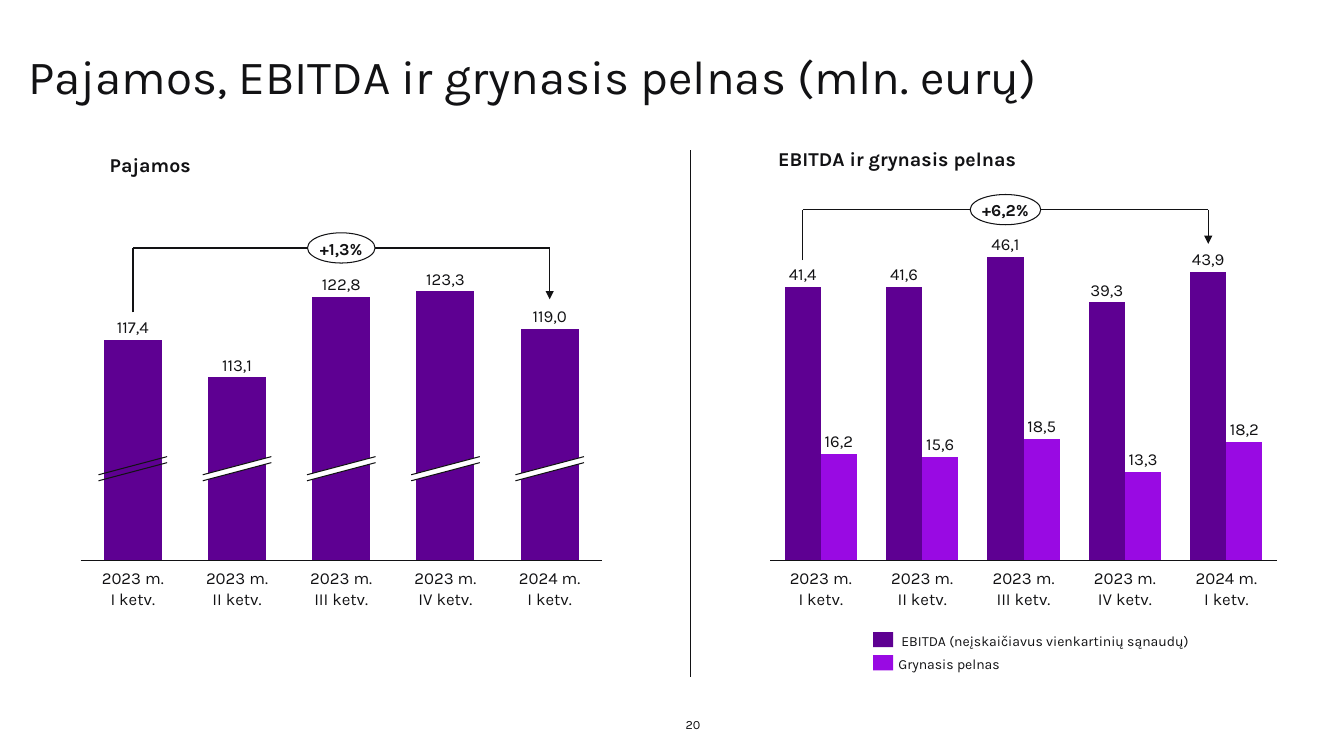
import pptx
import pptx.chart.data
import pptx.dml.color
import pptx.enum.chart
import pptx.enum.shapes
import pptx.enum.text
import pptx.oxml
import pptx.oxml.ns
import pptx.util

Inches = pptx.util.Inches
Pt = pptx.util.Pt
ALIGN = pptx.enum.text.PP_ALIGN
ANCHOR = pptx.enum.text.MSO_ANCHOR
SHAPE = pptx.enum.shapes.MSO_SHAPE
CHART = pptx.enum.chart.XL_CHART_TYPE

FONT = "Karla"
COLORS = {"ink": "121214", "white": "FFFFFF", "purple": "5E0092", "violet": "990AE3"}
QUARTERS = ["2023 m. I ketv.", "2023 m. II ketv.", "2023 m. III ketv.",
            "2023 m. IV ketv.", "2024 m. I ketv."]
GAP_WIDTH = 80
LABEL_GAP = 0.03
LABEL_HEIGHT = 0.21


def color(name):
    return pptx.dml.color.RGBColor.from_string(COLORS[name])


def set_text(shape, text, size=12, bold=False, align=ALIGN.LEFT, anchor=ANCHOR.TOP,
             spacing=1.06, wrap=True, margins=(0, 0)):
    frame = shape.text_frame
    frame.word_wrap = wrap
    frame.auto_size = pptx.enum.text.MSO_AUTO_SIZE.NONE
    frame.vertical_anchor = anchor
    frame.margin_left = frame.margin_right = Inches(margins[0])
    frame.margin_top = frame.margin_bottom = Inches(margins[1])
    paragraph = frame.paragraphs[0]
    paragraph.text = text
    paragraph.alignment = align
    paragraph.line_spacing = spacing
    paragraph.font.name = FONT
    paragraph.font.size = Pt(size)
    paragraph.font.bold = bold
    paragraph.font.color.rgb = color("ink")


def add_text(slide, text, left, top, width, height, **text_format):
    box = slide.shapes.add_textbox(Inches(left), Inches(top), Inches(width), Inches(height))
    set_text(box, text, **text_format)


def add_filled_shape(slide, kind, left, top, width, height, fill, outlined=False):
    shape = slide.shapes.add_shape(kind, Inches(left), Inches(top), Inches(width), Inches(height))
    shape.shadow.inherit = False
    shape.fill.solid()
    shape.fill.fore_color.rgb = color(fill)
    if outlined:
        shape.line.color.rgb = color("ink")
        shape.line.width = Pt(0.75)
    else:
        shape.line.fill.background()
    return shape


def add_line(slide, start, end, width=1, arrow=False):
    connector = slide.shapes.add_connector(
        pptx.enum.shapes.MSO_CONNECTOR.STRAIGHT, *map(Inches, start + end))
    connector.line.color.rgb = color("ink")
    connector.line.width = Pt(width)
    properties = connector._element.spPr
    if arrow:
        tail = pptx.oxml.parse_xml(
            f'<a:tailEnd {pptx.oxml.ns.nsdecls("a")} type="triangle"/>')
        connector.line._get_or_add_ln().append(tail)
    properties.append(pptx.oxml.parse_xml(f'<a:effectLst {pptx.oxml.ns.nsdecls("a")}/>'))


def add_column_chart(slide, kind, frame, plot, series, overlap):
    data = pptx.chart.data.CategoryChartData()
    data.categories = ["1", "2", "3", "4", "5"]
    for number, (values, _) in enumerate(series, 1):
        data.add_series(f"Series {number}", values)
    chart = slide.shapes.add_chart(kind, *map(Inches, frame), data).chart
    chart.has_legend = False
    chart.has_title = False
    chart.font.name = FONT
    chart.font.size = Pt(10)
    chart.font.color.rgb = color("ink")

    columns = chart.plots[0]
    columns.gap_width = GAP_WIDTH
    columns.overlap = overlap
    columns.vary_by_categories = False
    for chart_series, (_, fill) in zip(columns.series, series):
        chart_series.format.fill.solid()
        chart_series.format.fill.fore_color.rgb = color(fill)

    value_axis = chart.value_axis
    value_axis.minimum_scale = 0
    value_axis.maximum_scale = 100
    value_axis.has_major_gridlines = False
    value_axis.visible = False
    category_axis = chart.category_axis
    category_axis.tick_label_position = pptx.enum.chart.XL_TICK_LABEL_POSITION.NONE
    category_axis.major_tick_mark = pptx.enum.chart.XL_TICK_MARK.NONE
    category_axis.format.line.color.rgb = color("ink")
    category_axis.format.line.width = Pt(0.75)

    plot_area = chart._chartSpace.chart.plotArea
    for old_layout in plot_area.findall(pptx.oxml.ns.qn("c:layout")):
        plot_area.remove(old_layout)
    sizes = "".join(f'<c:{name} val="{value}"/>' for name, value in zip("xywh", plot))
    plot_area.insert(0, pptx.oxml.parse_xml(
        f'<c:layout {pptx.oxml.ns.nsdecls("c")}><c:manualLayout>'
        '<c:layoutTarget val="inner"/><c:xMode val="edge"/><c:yMode val="edge"/>'
        f'{sizes}</c:manualLayout></c:layout>'))


def column_centers(frame, plot):
    step = frame[2] * plot[2] / len(QUARTERS)
    first = frame[0] + frame[2] * plot[0] + step / 2
    return [first + step * index for index in range(len(QUARTERS))], step


def add_value_labels(slide, frame, plot, centers, values, labels):
    plot_top = frame[1] + frame[3] * plot[1]
    plot_height = frame[3] * plot[3]
    for center, value, label in zip(centers, values, labels):
        bar_top = plot_top + plot_height * (1 - value / 100)
        add_text(slide, label, center - 0.22, bar_top - LABEL_GAP - LABEL_HEIGHT,
                 0.44, LABEL_HEIGHT, align=ALIGN.CENTER, anchor=ANCHOR.BOTTOM, wrap=False)


def add_quarter_labels(slide, centers):
    for center, quarter in zip(centers, QUARTERS):
        add_text(slide, quarter, center - 0.32, 5.62, 0.64, 0.42, align=ALIGN.CENTER)


def add_growth_bracket(slide, text, left, right, top, start, end, width):
    add_line(slide, (left, start), (left, top))
    add_line(slide, (left, top), (right, top))
    add_line(slide, (right, top), (right, end), arrow=True)
    bubble = add_filled_shape(slide, SHAPE.OVAL, (left + right - width) / 2, top - 0.15,
                              width, 0.3, "white", outlined=True)
    set_text(bubble, text, bold=True, align=ALIGN.CENTER, anchor=ANCHOR.MIDDLE, wrap=False)


def add_axis_break(slide, center, filled):
    left, right = center - 0.34, center + 0.34
    upper = ((left, 4.71), (right, 4.53))
    lower = ((left, 4.77), (right, 4.59))
    if filled:
        corners = [tuple(map(Inches, point)) for point in (*upper, *reversed(lower))]
        builder = slide.shapes.build_freeform(*corners[0])
        builder.add_line_segments(corners[1:], close=True)
        band = builder.convert_to_shape()
        band.shadow.inherit = False
        band.fill.solid()
        band.fill.fore_color.rgb = color("white")
        band.line.fill.background()
    for start, end in (upper, lower):
        add_line(slide, start, end, width=0.75)


def add_heading(slide, text, left, top, width):
    add_text(slide, text, left, top, width, 0.34, size=14, bold=True,
             spacing=1.0, margins=(0.1, 0.05))


def add_revenue(slide):
    frame, plot = (0.71, 2.8, 5.35, 2.85), (0.017, 0.032, 0.966, 0.937)
    values = [82, 68, 98, 100, 86]
    add_column_chart(slide, CHART.COLUMN_STACKED, frame, plot, [(values, "purple")], 100)
    centers, _ = column_centers(frame, plot)
    for index, center in enumerate(centers):
        add_axis_break(slide, center, filled=index > 0)
    add_growth_bracket(slide, "+1,3%", centers[0], centers[-1], 2.46, 3.1, 2.97, 0.67)
    add_quarter_labels(slide, centers)
    add_value_labels(slide, frame, plot, centers, values,
                     ["117,4", "113,1", "122,8", "123,3", "119,0"])
    add_heading(slide, "Pajamos", 0.99, 1.47, 1.97)


def add_profit(slide):
    frame, plot = (7.55, 2.46, 5.21, 3.19), (0.017, 0.028, 0.965, 0.943)
    ebitda, profit = [90, 90, 100, 85, 95], [35, 34, 40, 29, 39]
    add_column_chart(slide, CHART.COLUMN_CLUSTERED, frame, plot,
                     [(ebitda, "purple"), (profit, "violet")], 0)
    centers, step = column_centers(frame, plot)
    half_bar = step / (2 + GAP_WIDTH / 100) / 2
    ebitda_centers = [center - half_bar for center in centers]
    profit_centers = [center + half_bar for center in centers]
    add_growth_bracket(slide, "+6,2%", ebitda_centers[0], ebitda_centers[-1],
                       2.08, 2.58, 2.42, 0.7)
    add_quarter_labels(slide, centers)
    add_value_labels(slide, frame, plot, ebitda_centers, ebitda,
                     ["41,4", "41,6", "46,1", "39,3", "43,9"])
    add_value_labels(slide, frame, plot, profit_centers, profit,
                     ["16,2", "15,6", "18,5", "13,3", "18,2"])
    add_heading(slide, "EBITDA ir grynasis pelnas", 7.62, 1.41, 2.58)
    legend = [("EBITDA (neįskaičiavus vienkartinių sąnaudų)", "purple", 8.94, 6.27),
              ("Grynasis pelnas", "violet", 8.91, 6.5)]
    for text, fill, left, top in legend:
        add_filled_shape(slide, SHAPE.RECTANGLE, 8.66, top, 0.2, 0.15, fill)
        add_text(slide, text, left, top - 0.01, 3, 0.18, size=10, anchor=ANCHOR.MIDDLE)


def main():
    presentation = pptx.Presentation()
    presentation.slide_width = Inches(13.33)
    presentation.slide_height = Inches(7.5)
    slide = presentation.slides.add_slide(presentation.slide_layouts[5])
    title = slide.shapes.title
    title.left, title.top, title.width, title.height = map(Inches, (0.28, 0.55, 12.77, 1.01))
    set_text(title, "Pajamos, EBITDA ir grynasis pelnas (mln. eurų)", size=34, spacing=0.86)
    add_revenue(slide)
    add_profit(slide)
    add_line(slide, (6.85, 1.49), (6.85, 6.72), width=0.5)
    add_text(slide, "20", 6.8, 7.02, 0.81, 0.24, size=9, anchor=ANCHOR.BOTTOM, spacing=1.0)
    presentation.save("out.pptx")


if __name__ == "__main__":
    main()
